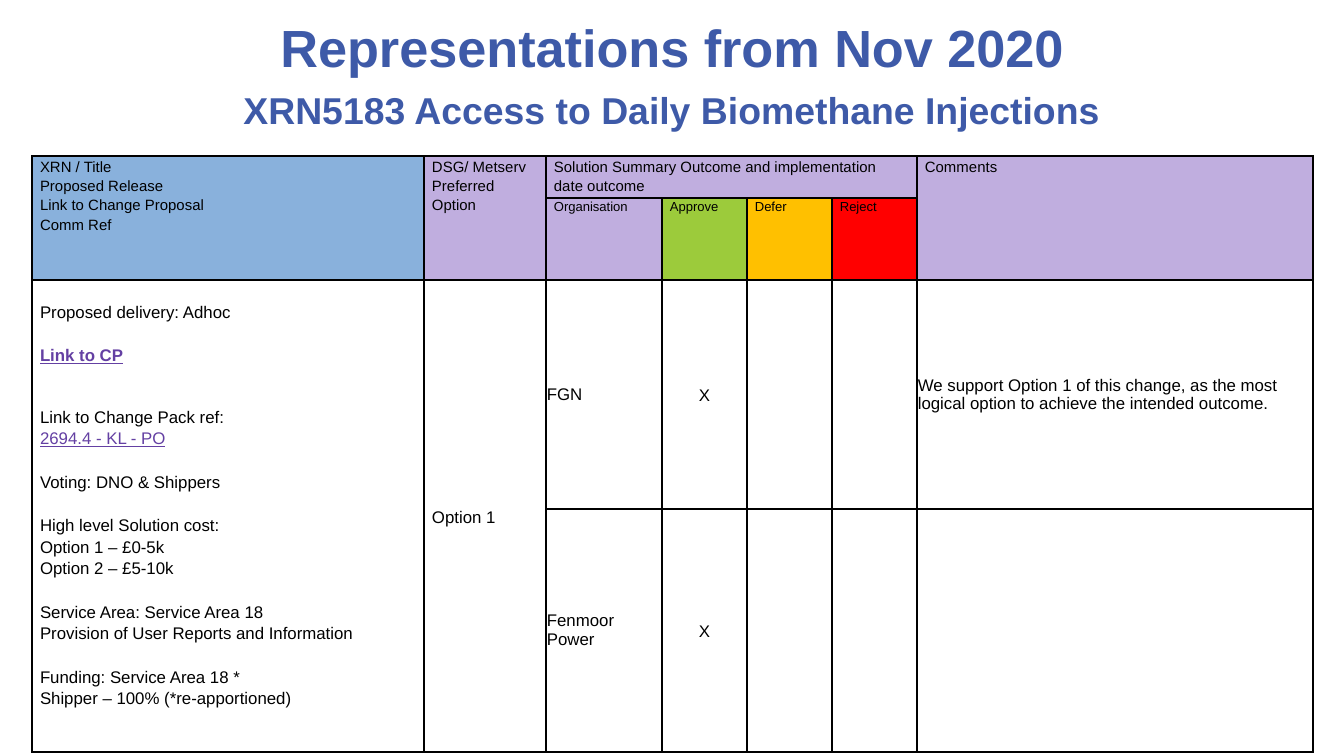
from dataclasses import dataclass

from lxml import etree
from pptx import Presentation
from pptx import util as u
from pptx.dml.color import RGBColor
from pptx.enum import text
from pptx.oxml import ns

EMU_PER_PX = 914400 / 134.4


@dataclass(frozen=True)
class Theme:
    font: str = "Arial"
    heading: str = "3E5AA8"
    ink: str = "000000"
    link: str = "6440A3"
    blue: str = "89B1DC"
    lilac: str = "C0AEDF"
    green: str = "9CCB3B"
    amber: str = "FFC000"
    red: str = "FF0000"
    title_size: int = 28
    subtitle_size: int = 20
    header_size: int = 8
    vote_size: int = 7
    body_size: int = 9
    border: int = 1
    spacing: float = 1.15
    gap: float = 11.6


THEME = Theme()


@dataclass(frozen=True)
class Line:
    words: str
    before: float = 0
    color: str = THEME.ink
    bold: bool = False
    underline: bool = False


@dataclass(frozen=True)
class Heading:
    words: str
    top: int
    height: int
    size: int


@dataclass(frozen=True)
class Entry:
    row: int
    col: int
    lines: tuple[Line, ...]
    size: int = THEME.body_size
    fill: str | None = None
    rows: int = 1
    cols: int = 1
    middle: bool = False
    centered: bool = False
    spacing: float = THEME.spacing
    inset: int = 8
    top_inset: int = 0


def px(length: int) -> u.Emu:
    return u.Emu(round(length * EMU_PER_PX))


def lines(*words: str) -> tuple[Line, ...]:
    return tuple(Line(item) for item in words)


def write(frame, content: tuple[Line, ...], *, size: int, spacing: float = 1,
          centered: bool = False) -> None:
    frame.word_wrap = True
    for index, line in enumerate(content):
        paragraph = frame.paragraphs[0] if index == 0 else frame.add_paragraph()
        paragraph.alignment = text.PP_ALIGN.CENTER if centered else text.PP_ALIGN.LEFT
        paragraph.line_spacing = spacing
        paragraph.space_before = u.Pt(line.before)
        run = paragraph.add_run()
        run.text = line.words
        run.font.name = THEME.font
        run.font.size = u.Pt(size)
        run.font.bold = line.bold
        run.font.underline = line.underline
        run.font.color.rgb = RGBColor.from_string(line.color)


def draw_heading(slide, heading: Heading) -> None:
    box = slide.shapes.add_textbox(px(67), px(heading.top), px(1210), px(heading.height))
    box.text_frame.vertical_anchor = text.MSO_ANCHOR.MIDDLE
    write(box.text_frame, (Line(heading.words, color=THEME.heading, bold=True),),
          size=heading.size, centered=True)


def draw_borders(cell) -> None:
    properties = cell._tc.get_or_add_tcPr()
    for position, side in enumerate(("lnL", "lnR", "lnT", "lnB")):
        border = etree.Element(ns.qn(f"a:{side}"), w=str(u.Pt(THEME.border)))
        solid = etree.SubElement(border, ns.qn("a:solidFill"))
        etree.SubElement(solid, ns.qn("a:srgbClr"), val=THEME.ink)
        properties.insert(position, border)


def draw_entry(table, entry: Entry) -> None:
    cell = table.cell(entry.row, entry.col)
    if entry.rows > 1 or entry.cols > 1:
        cell.merge(table.cell(entry.row + entry.rows - 1, entry.col + entry.cols - 1))
    if entry.fill:
        cell.fill.solid()
        cell.fill.fore_color.rgb = RGBColor.from_string(entry.fill)
    cell.margin_left = cell.margin_right = px(entry.inset)
    cell.margin_top = px(entry.top_inset)
    if entry.middle:
        cell.vertical_anchor = text.MSO_ANCHOR.MIDDLE
    write(cell.text_frame, entry.lines, size=entry.size, spacing=entry.spacing,
          centered=entry.centered)


def header(col: int, *words: str, fill: str = THEME.lilac, rows: int = 2,
           cols: int = 1) -> Entry:
    return Entry(0, col, lines(*words), THEME.header_size, fill, rows, cols)


def plain(row: int, col: int, words: str) -> Entry:
    return Entry(row, col, lines(words), middle=True, spacing=1, inset=1)


def approval(row: int) -> Entry:
    return Entry(row, 3, lines("X"), middle=True, centered=True)


def draw_table(slide, widths: tuple[int, ...], heights: tuple[int, ...],
               entries: list[Entry]) -> None:
    table = slide.shapes.add_table(len(heights), len(widths), px(32), px(156),
                                   px(sum(widths)), px(sum(heights))).table
    table.first_row = table.horz_banding = False
    for column, width in zip(table.columns, widths):
        column.width = px(width)
    for row, height in zip(table.rows, heights):
        row.height = px(height)
    for cell in table.iter_cells():
        cell.margin_left = cell.margin_right = cell.margin_top = cell.margin_bottom = 0
        cell.fill.background()
        draw_borders(cell)
    for entry in entries:
        draw_entry(table, entry)


GAP = THEME.gap
PROPOSAL = (
    Line("Proposed delivery: Adhoc"),
    Line("Link to CP", GAP, THEME.link, bold=True, underline=True),
    Line("Link to Change Pack ref:", GAP + 10),
    Line("2694.4 - KL - PO", color=THEME.link, underline=True),
    Line("Voting: DNO & Shippers", GAP),
    Line("High level Solution cost:", GAP),
    Line("Option 1 – £0-5k"),
    Line("Option 2 – £5-10k"),
    Line("Service Area: Service Area 18", GAP),
    Line("Provision of User Reports and Information"),
    Line("Funding: Service Area 18 *", GAP),
    Line("Shipper – 100% (*re-apportioned)"),
)
VOTES = (("Organisation\u00a0".strip(), THEME.lilac), ("Approve", THEME.green),
         ("Defer", THEME.amber), ("Reject", THEME.red))
ENTRIES = [
    header(0, "XRN / Title", "Proposed Release", "Link to Change Proposal", "Comm Ref",
           fill=THEME.blue),
    header(1, "DSG/ Metserv Preferred Option"),
    header(2, "Solution Summary Outcome and implementation date outcome", rows=1, cols=4),
    header(6, "Comments"),
    *(Entry(1, col, lines(label), THEME.vote_size, fill)
      for col, (label, fill) in enumerate(VOTES, start=2)),
    Entry(2, 0, PROPOSAL, rows=2, top_inset=20),
    Entry(2, 1, lines("Option 1"), rows=2, middle=True),
    plain(2, 2, "FGN"),
    plain(3, 2, "Fenmoor Power"),
    approval(2),
    approval(3),
    plain(2, 6, "We support Option 1 of this change, as the most logical option "
                "to achieve the intended outcome."),
]


def main() -> None:
    deck = Presentation()
    deck.slide_width, deck.slide_height = px(1344), px(756)
    slide = deck.slides.add_slide(deck.slide_layouts[6])
    draw_heading(slide, Heading("XRN5183 Access to Daily Biomethane Injections",
                                79, 62, THEME.subtitle_size))
    draw_table(slide, (392, 122, 116, 85, 85, 85, 396), (42, 78, 229, 243), ENTRIES)
    draw_heading(slide, Heading("Representations from Nov 2020", 0, 94, THEME.title_size))
    deck.save("out.pptx")


if __name__ == "__main__":
    main()
